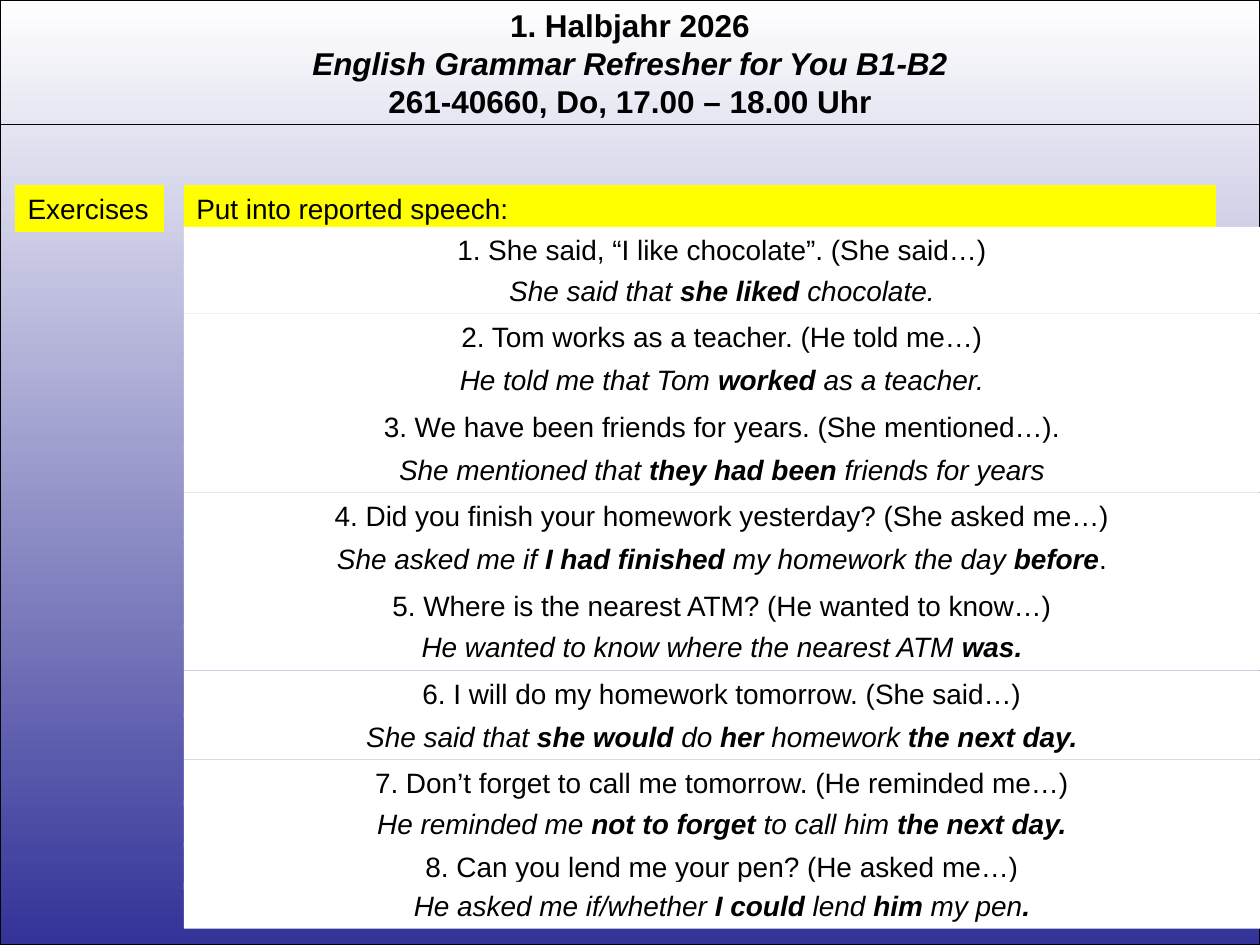
from lxml import etree
from pptx import Presentation
from pptx.dml.color import RGBColor
from pptx.enum.shapes import MSO_CONNECTOR, MSO_SHAPE
from pptx.enum.text import MSO_ANCHOR, MSO_AUTO_SIZE, PP_ALIGN
from pptx.oxml.ns import qn
from pptx.util import Inches, Pt

RECTANGLE = MSO_SHAPE.RECTANGLE
STRAIGHT = MSO_CONNECTOR.STRAIGHT
TOP = MSO_ANCHOR.TOP
GROW = MSO_AUTO_SIZE.SHAPE_TO_FIT_TEXT
LEFT, CENTER = PP_ALIGN.LEFT, PP_ALIGN.CENTER

BLACK = RGBColor(0x00, 0x00, 0x00)
WHITE = RGBColor(0xFF, 0xFF, 0xFF)
YELLOW = RGBColor(0xFF, 0xFF, 0x00)
INDIGO = RGBColor(0x33, 0x33, 0x99)

FONT = "Arial"
SLIDE_WIDTH, SLIDE_HEIGHT = 10, 7.5
LIST_LEFT = 1.46
LIST_WIDTH = SLIDE_WIDTH - LIST_LEFT
ROW_HEIGHT = 0.37
LABEL_TOP = 1.47

HEADING = [
    ("1. Halbjahr 2026", False),
    ("English Grammar Refresher for You B1-B2", True),
    ("261-40660, Do, 17.00 – 18.00 Uhr", False),
]

# Each entry: question top, question, answer top, answer with *bold* parts, upright ending.
EXERCISES = [
    (1.80, "1. She said, “I like chocolate”. (She said…)",
     2.12, "She said that *she liked *chocolate.", ""),
    (2.49, "2. Tom works as a teacher. (He told me…)",
     2.83, "He told me that Tom *worked* as a teacher.", ""),
    (3.20, "3. We have been friends for years. (She mentioned…).",
     3.54, "She mentioned that *they had been *friends for years", ""),
    (3.91, "4. Did you finish your homework yesterday? (She asked me…)",
     4.25, "She asked me if *I had finished *my homework the day *before*", "."),
    (4.62, "5. Where is the nearest ATM? (He wanted to know…)",
     4.95, "He wanted to know where the nearest ATM *was.*", ""),
    (5.32, "6. I will do my homework tomorrow. (She said…)",
     5.66, "She said that *she would *do *her* homework *the next day.*", ""),
    (6.03, "7. Don’t forget to call me tomorrow. (He reminded me…)",
     6.35, "He reminded me *not to forget *to call him *the next day.*", ""),
    (6.69, "8. Can you lend me your pen? (He asked me…)",
     7.00, "He asked me if/whether *I could *lend *him* my pen*.*", ""),
]


def add_span(para, text, size, bold=False, italic=False):
    """Append one formatted run to a paragraph."""
    span = para.add_run()
    span.text = text
    span.font.name = FONT
    span.font.size = Pt(size)
    span.font.bold = bold
    span.font.italic = italic
    span.font.color.rgb = BLACK


def add_background(page):
    """Cover the page with an outlined vertical gradient."""
    panel = page.shapes.add_shape(
        RECTANGLE, 0, 0, Inches(SLIDE_WIDTH), Inches(SLIDE_HEIGHT))
    panel.shadow.inherit = False
    panel.fill.gradient()
    panel.fill.gradient_angle = 270
    for stop, color in zip(panel.fill.gradient_stops, (WHITE, INDIGO)):
        stop.color.rgb = color
    panel.line.color.rgb = BLACK
    panel.line.width = Pt(0.75)


def add_heading(page):
    """Add the course heading and the rule beneath it."""
    box = page.shapes.add_textbox(0, 0, Inches(SLIDE_WIDTH), Inches(1.01))
    frame = box.text_frame
    frame.word_wrap = True
    frame.auto_size = GROW
    for index, (text, italic) in enumerate(HEADING):
        para = frame.add_paragraph() if index else frame.paragraphs[0]
        para.alignment = CENTER
        add_span(para, text, 18, bold=True, italic=italic)
    rule = page.shapes.add_connector(
        STRAIGHT, 0, Inches(0.99), Inches(SLIDE_WIDTH), Inches(0.99))
    rule.line.color.rgb = BLACK
    rule.line.width = Pt(0.75)
    etree.SubElement(rule._element.spPr, qn("a:effectLst"))


def add_strip(page, left, top, width, color, alignment):
    """Add a filled text strip and return its empty paragraph."""
    strip = page.shapes.add_shape(
        RECTANGLE, Inches(left), Inches(top), Inches(width), Inches(ROW_HEIGHT))
    strip.shadow.inherit = False
    strip.fill.solid()
    strip.fill.fore_color.rgb = color
    strip.line.fill.background()
    frame = strip.text_frame
    frame.word_wrap = True
    frame.auto_size = GROW
    frame.vertical_anchor = TOP
    para = frame.paragraphs[0]
    para.alignment = alignment
    return para


def add_label(page, left, width, text):
    """Add a yellow label strip."""
    add_span(add_strip(page, left, LABEL_TOP, width, YELLOW, LEFT), text, 16)


def add_question(page, top, text):
    """Add a white strip with a question."""
    add_span(add_strip(page, LIST_LEFT, top, LIST_WIDTH, WHITE, CENTER), text, 16)


def add_answer(page, top, text, ending):
    """Add a white strip with an italic answer, its key words in bold."""
    para = add_strip(page, LIST_LEFT, top, LIST_WIDTH, WHITE, CENTER)
    for index, part in enumerate(text.split("*")):
        if part:
            add_span(para, part, 16, bold=index % 2 == 1, italic=True)
    if ending:
        add_span(para, ending, 16)


def main():
    """Build and save the exercise slide."""
    deck = Presentation()
    deck.slide_width = Inches(SLIDE_WIDTH)
    deck.slide_height = Inches(SLIDE_HEIGHT)
    page = deck.slides.add_slide(deck.slide_layouts[6])
    add_background(page)
    add_heading(page)
    add_label(page, 0.12, 1.18, "Exercises")
    add_label(page, LIST_LEFT, 8.19, "Put into reported speech:")
    for question_top, question, answer_top, answer, ending in EXERCISES:
        add_question(page, question_top, question)
        add_answer(page, answer_top, answer, ending)
    deck.save("out.pptx")


if __name__ == "__main__":
    main()
